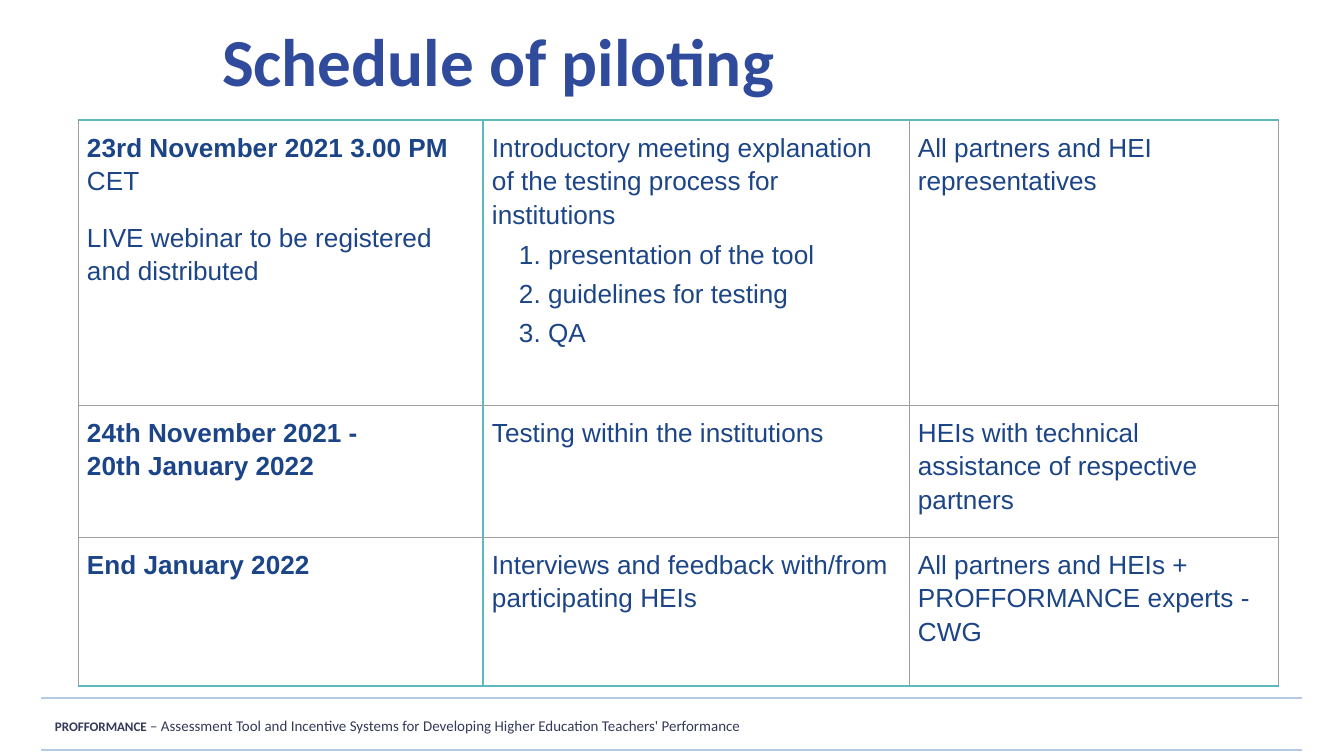
from lxml import etree
from pptx import Presentation
from pptx import util as u
from pptx.dml.color import RGBColor
from pptx.enum import shapes, text
from pptx.oxml.ns import qn


# Content: a cell is a list of paragraphs (space before, indent px, runs of text and bold)
def plain(words, bold=False, before=0, indent=0):
    return (before, indent, [(words, bold)])


TITLE = [plain("Schedule of piloting", True)]
FOOTER = [
    ("PROFFORMANCE", True, 7),
    (" – Assessment Tool and Incentive Systems for Developing Higher Education "
     "Teachers' Performance", False, 8),
]
STEPS = ["presentation of the tool", "guidelines for testing", "QA"]
ROWS = [
    [
        [(0, 0, [("23rd November 2021 3.00 PM ", True), ("CET", False)]),
         plain("LIVE webinar to be registered and distributed", before=12)],
        [plain("Introductory meeting explanation of the testing process for institutions")]
        + [plain(f"{number}. {step}", before=3, indent=27)
           for number, step in enumerate(STEPS, 1)],
        [plain("All partners and HEI representatives")],
    ],
    [
        [plain("24th November 2021 -", True), plain("20th January 2022", True)],
        [plain("Testing within the institutions")],
        [plain("HEIs with technical assistance of respective partners")],
    ],
    [
        [plain("End January 2022", True)],
        [plain("Interviews and feedback with/from participating HEIs")],
        [plain("All partners and HEIs + PROFFORMANCE experts - CWG")],
    ],
]

# Layout in px
SCALE = 914400 / 134.4
SLIDE_SIZE = (1344, 756)
TITLE_BOX = (209, 0, 1089, 120)
FOOTER_BOX = (42, 704, 906, 44)
RULE_LEFT, RULE_RIGHT, RULE_TOPS = 41, 1302, (698, 750)
TABLE_LEFT, TABLE_TOP = 78, 120
COLUMN_WIDTHS = (405, 426, 370)
ROW_HEIGHTS = (285, 132, 149)
BOX_INSET, CELL_INSET = 13, 9

WHITE = RGBColor(0xFF, 0xFF, 0xFF)
TITLE_BLUE = RGBColor(0x30, 0x4B, 0x9B)
TABLE_BLUE = RGBColor(0x1C, 0x45, 0x87)
FOOTER_NAVY = RGBColor(0x33, 0x3A, 0x5A)
RULE_BLUE = RGBColor(0xB3, 0xCB, 0xE7)
TEAL = RGBColor(0x5E, 0xB8, 0xBF)
GRAY = RGBColor(0x9E, 0x9E, 0x9E)


def px(length):
    return u.Emu(round(length * SCALE))


def set_values(target, values):
    for name, value in values.items():
        setattr(target, name, value)


def margins(inset):
    return {f"margin_{side}": px(inset) for side in ("left", "right", "top", "bottom")}


def add_run(paragraph, words, bold, size, name, color):
    run = paragraph.add_run()
    run.text = words
    set_values(run.font, {"size": u.Pt(size), "name": name, "bold": bold})
    run.font.color.rgb = color


def fill_frame(frame, paragraphs, size, name, color, spacing=1.0):
    for index, (before, indent, runs) in enumerate(paragraphs):
        paragraph = frame.add_paragraph() if index else frame.paragraphs[0]
        set_values(paragraph, {"line_spacing": spacing, "space_before": u.Pt(before)})
        if indent:
            properties = paragraph._p.get_or_add_pPr()
            properties.set("marL", str(px(indent)))
            properties.set("indent", "0")
        for words, bold in runs:
            add_run(paragraph, words, bold, size, name, color)


def add_box(slide, box):
    frame = slide.shapes.add_textbox(*map(px, box)).text_frame
    set_values(frame, {"word_wrap": True, "vertical_anchor": text.MSO_ANCHOR.MIDDLE,
                       **margins(BOX_INSET)})
    return frame


def set_borders(cell, row, column):
    teal_sides = {"lnL": column == 1, "lnR": column == 0,
                  "lnT": row == 0, "lnB": row == len(ROWS) - 1}
    properties = cell._tc.get_or_add_tcPr()
    for index, (side, is_teal) in enumerate(teal_sides.items()):
        line = etree.Element(qn("a:" + side), w=str(u.Pt(1 if is_teal else 0.5)))
        fill = etree.SubElement(line, qn("a:solidFill"))
        etree.SubElement(fill, qn("a:srgbClr"), val=str(TEAL if is_teal else GRAY))
        properties.insert(index, line)


def add_schedule(slide):
    table = slide.shapes.add_table(
        len(ROWS), len(COLUMN_WIDTHS), px(TABLE_LEFT), px(TABLE_TOP),
        px(sum(COLUMN_WIDTHS)), px(sum(ROW_HEIGHTS))).table
    set_values(table, {"first_row": False, "horz_banding": False})
    for column, width in zip(table.columns, COLUMN_WIDTHS):
        column.width = px(width)
    for row, height in zip(table.rows, ROW_HEIGHTS):
        row.height = px(height)
    for row, cells in enumerate(ROWS):
        for column, paragraphs in enumerate(cells):
            cell = table.cell(row, column)
            set_values(cell, margins(CELL_INSET))
            cell.fill.solid()
            cell.fill.fore_color.rgb = WHITE
            set_borders(cell, row, column)
            fill_frame(cell.text_frame, paragraphs, 14, "Arial", TABLE_BLUE, 1.15)


def add_rule(slide, top):
    rule = slide.shapes.add_connector(
        shapes.MSO_CONNECTOR.STRAIGHT, px(RULE_LEFT), px(top), px(RULE_RIGHT), px(top))
    rule.line.color.rgb = RULE_BLUE
    rule.line.width = u.Pt(0.75)
    etree.SubElement(rule._element.spPr, qn("a:effectLst"))


def main():
    presentation = Presentation()
    width, height = map(px, SLIDE_SIZE)
    set_values(presentation, {"slide_width": width, "slide_height": height})
    slide = presentation.slides.add_slide(presentation.slide_layouts[6])

    # Footer with its two rules
    for top in RULE_TOPS:
        add_rule(slide, top)
    footer = add_box(slide, FOOTER_BOX)
    for words, bold, size in FOOTER:
        add_run(footer.paragraphs[0], words, bold, size, "Calibri", FOOTER_NAVY)

    # Title
    fill_frame(add_box(slide, TITLE_BOX), TITLE, 36, "Calibri", TITLE_BLUE)

    # Schedule table
    add_schedule(slide)
    presentation.save("out.pptx")


if __name__ == "__main__":
    main()
